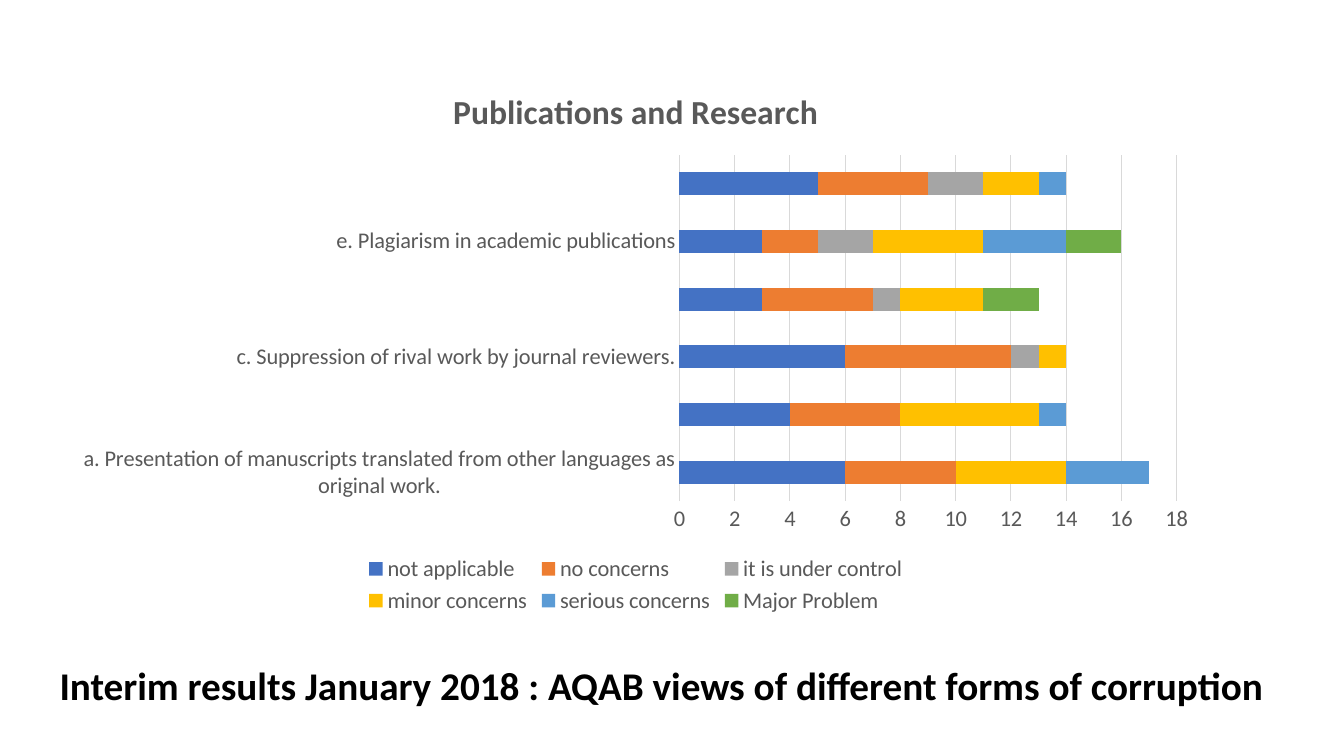
"""Build the slide on corruption concerns in publications and research."""
from pptx import Presentation
from pptx import util as u
from pptx.chart.data import CategoryChartData
from pptx.dml.color import RGBColor
from pptx.enum import chart as ch, text

HEADLINE = "Interim results January 2018 : AQAB views of different forms of corruption"
CHART_TITLE = "Publications and Research"
CONCERNS = [
    "a. Presentation of manuscripts translated from other languages as original work.",
    "",
    "c. Suppression of rival work by journal reviewers.",
    "",
    "e. Plagiarism in academic publications",
    "",
]
RATINGS = {
    "not applicable": (6, 4, 6, 3, 3, 5),
    "no concerns": (4, 4, 6, 4, 2, 4),
    "it is under control": (0, 0, 1, 1, 2, 2),
    "minor concerns": (4, 5, 1, 3, 4, 2),
    "serious concerns": (3, 1, 0, 0, 3, 1),
    "Major Problem": (0, 0, 0, 2, 2, 0),
}
COLORS = {
    "not applicable": "4472C4",
    "no concerns": "ED7D31",
    "it is under control": "A5A5A5",
    "minor concerns": "FFC000",
    "serious concerns": "5B9BD5",
    "Major Problem": "70AD47",
    "headline": "000000",
    "label": "595959",
    "grid": "D9D9D9",
}
PX = 9144
SLIDE = (1333, 750)
HEADLINE_BOX = (49, 651, 1262, 57)
CHART_BOX = (60, 66, 1141, 548)


def px(lengths):
    return [u.Emu(length * PX) for length in lengths]


def color(name):
    return RGBColor.from_string(COLORS[name])


def style(font, size, name, bold=False):
    font.name, font.size, font.bold = "Calibri", u.Pt(size), bold
    font.color.rgb = color(name)


def grid_line(line):
    line.color.rgb, line.width = color("grid"), u.Pt(0.75)


def add_headline(slide):
    headline = slide.shapes.title
    headline.left, headline.top, headline.width, headline.height = px(HEADLINE_BOX)
    frame = headline.text_frame
    frame.text = HEADLINE
    frame.word_wrap = True
    frame.vertical_anchor = text.MSO_ANCHOR.TOP
    frame.paragraphs[0].alignment = text.PP_ALIGN.LEFT
    style(frame.paragraphs[0].font, 28, "headline", True)


def add_ratings(slide):
    data = CategoryChartData(number_format="General")
    data.categories = CONCERNS
    for rating, counts in RATINGS.items():
        data.add_series(rating, counts)
    chart = slide.shapes.add_chart(
        ch.XL_CHART_TYPE.BAR_STACKED, *px(CHART_BOX), data).chart
    style(chart.font, 10, "headline")

    title = chart.chart_title.text_frame
    title.text = CHART_TITLE
    style(title.paragraphs[0].font, 24, "label", True)
    chart.chart_title.include_in_layout = False

    chart.has_legend = True
    chart.legend.position = ch.XL_LEGEND_POSITION.BOTTOM
    chart.legend.include_in_layout = False
    style(chart.legend.font, 16, "label")

    plot = chart.plots[0]
    plot.gap_width, plot.overlap, plot.vary_by_categories = 150, 100, False
    for series in plot.series:
        series.format.fill.solid()
        series.format.fill.fore_color.rgb = color(series.name)

    for axis in (chart.category_axis, chart.value_axis):
        axis.major_tick_mark = axis.minor_tick_mark = ch.XL_TICK_MARK.NONE
        style(axis.tick_labels.font, 16, "label")
    grid_line(chart.category_axis.format.line)
    chart.value_axis.format.line.fill.background()
    grid_line(chart.value_axis.major_gridlines.format.line)


def main():
    deck = Presentation()
    deck.slide_width, deck.slide_height = px(SLIDE)
    slide = deck.slides.add_slide(deck.slide_layouts[5])
    add_headline(slide)
    add_ratings(slide)
    deck.save("out.pptx")


if __name__ == "__main__":
    main()
